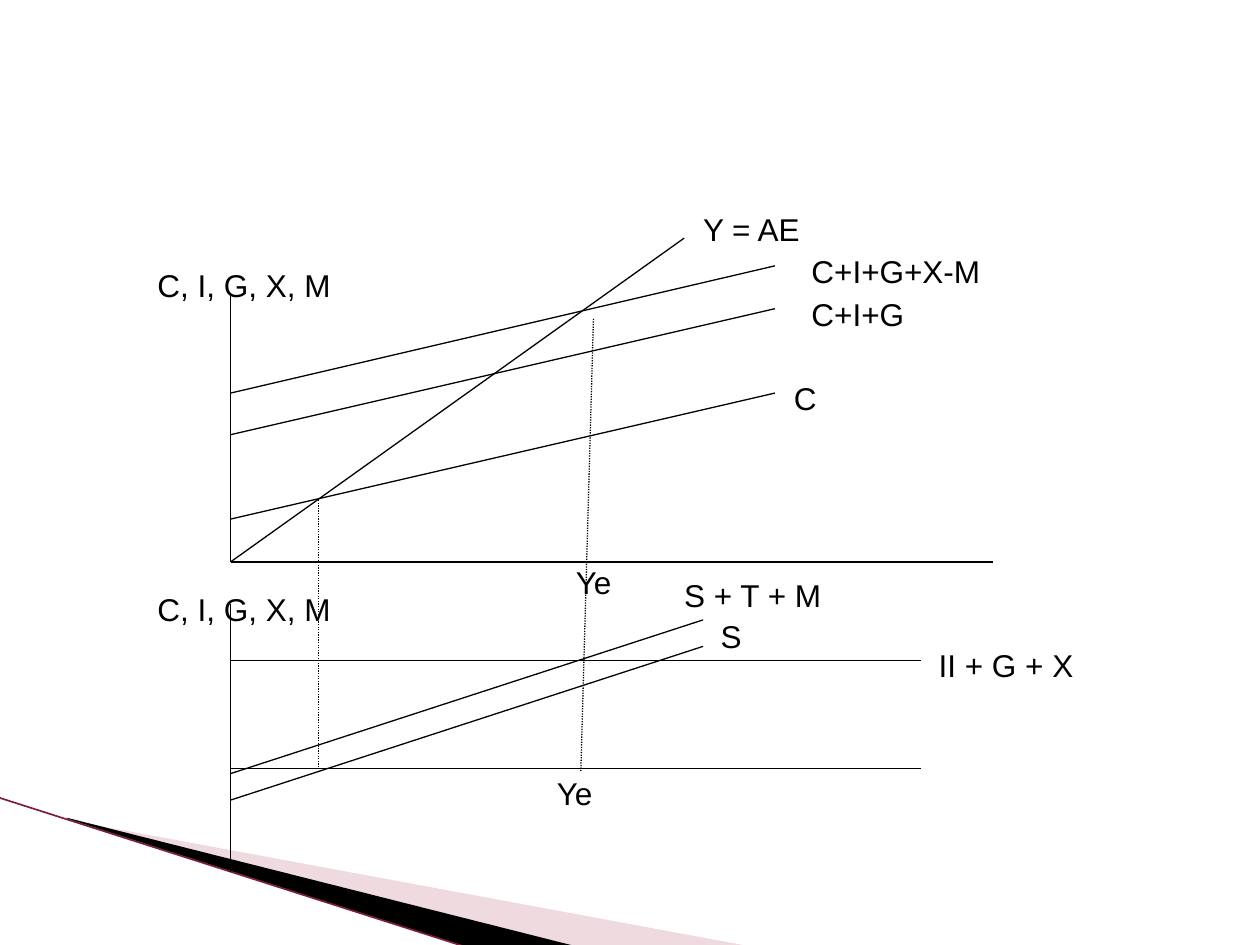
from dataclasses import dataclass

from lxml.etree import SubElement
from pptx import Presentation
from pptx.dml.color import RGBColor
from pptx.enum.dml import MSO_LINE
from pptx.enum.shapes import MSO_CONNECTOR
from pptx.oxml.ns import qn
from pptx.util import Pt

PX = 9144


@dataclass(frozen=True)
class Theme:
    """Colours, type and line weights of the slide."""
    ink: RGBColor = RGBColor(0x00, 0x00, 0x00)
    blush: RGBColor = RGBColor(0xD8, 0xA3, 0xAF)
    wine: RGBColor = RGBColor(0x7D, 0x1F, 0x3C)
    font: str = "Arial"
    label_size: float = 18
    label_gap: float = 10
    line_width: float = 0.75
    edge_width: float = 0.95
    blush_alpha: int = 40


THEME = Theme()


def add_line(slide, box, ends, color=THEME.ink, width=THEME.line_width, dash=None):
    """Draw a straight line between two points measured from the box corner."""
    left, top = box
    x1, y1, x2, y2 = ends
    line = slide.shapes.add_connector(
        MSO_CONNECTOR.STRAIGHT,
        (left + x1) * PX, (top + y1) * PX, (left + x2) * PX, (top + y2) * PX)
    line.line.color.rgb = color
    line.line.width = Pt(width)
    if dash:
        line.line.dash_style = dash
    SubElement(line._element.spPr, qn("a:effectLst"))


def add_label(slide, box, text, x, y, width):
    """Write one label at a place measured from the box corner."""
    left, top = box
    label = slide.shapes.add_textbox((left + x) * PX, (top + y) * PX, width * PX, 22 * PX)
    frame = label.text_frame
    frame.word_wrap = True
    frame.margin_left = frame.margin_top = frame.margin_right = frame.margin_bottom = 0
    paragraph = frame.paragraphs[0]
    paragraph.text = text
    paragraph.space_after = Pt(THEME.label_gap)
    paragraph.font.name = THEME.font
    paragraph.font.size = Pt(THEME.label_size)
    paragraph.font.color.rgb = THEME.ink


def add_wedge(slide, box, points, color, alpha=None):
    """Fill a closed outline whose points are measured from the box corner."""
    left, top = box
    start, *others = [(left + x, top + y) for x, y in points]
    builder = slide.shapes.build_freeform(*start, scale=float(PX))
    builder.add_line_segments(others, close=True)
    wedge = builder.convert_to_shape()
    wedge.shadow.inherit = False
    wedge.fill.solid()
    wedge.fill.fore_color.rgb = color
    wedge.line.fill.background()
    if alpha:
        tint = wedge._element.spPr.find(qn("a:solidFill"))[0]
        SubElement(tint, qn("a:alpha"), val=str(alpha * 1000))


def add_corner(slide, box):
    """Draw the swept wedges in the lower left corner."""
    add_wedge(slide, box, [(55, 18), (595, 118), (456, 118), (55, 17)],
              THEME.blush, THEME.blush_alpha)
    add_wedge(slide, box, [(53, 16), (457, 118), (372, 119), (54, 17)], THEME.ink)
    add_line(slide, box, (-1, 0, 371, 119), THEME.wine, THEME.edge_width)


def add_panel(slide, box, lines, labels):
    """Draw the axes, curves and labels of one diagram."""
    for ends in lines:
        add_line(slide, box, ends)
    for label in labels:
        add_label(slide, box, *label)


def add_expenditure(slide, box):
    """Draw the aggregate expenditure diagram."""
    axis = 58
    axes = [(axis, 67, axis, 279), (axis, 279, 663, 279)]
    spending = [(axis, start, 490, end) for start, end in ((145, 44), (178, 78), (245, 145))]
    income = (axis, 279, 418, 22)
    add_panel(slide, box, [*axes, *spending, income], [
        ("C, I, G, X, M", 0, 44, 173),
        ("Y = AE", 433, 0, 101),
        ("C+I+G+X-M", 519, 33, 159),
        ("C+I+G", 519, 67, 101),
        ("C", 505, 134, 43),
        ("Ye", 332, 280, 43),
    ])


def add_leakages(slide, box):
    """Draw the injections and leakages diagram."""
    axis = 58
    upright = (axis, 22, axis, 235)
    levels = [(axis, y, 606, y) for y in (67, 153)]
    leakages = [(axis, start, 433, start - 122) for start in (157, 178)]
    add_panel(slide, box, [upright, *levels, *leakages], [
        ("C, I, G, X, M", 0, 11, 173),
        ("S + T + M", 418, 0, 130),
        ("S", 447, 33, 43),
        ("II + G + X", 620, 56, 130),
        ("Ye", 317, 157, 43),
    ])


def add_guides(slide, box):
    """Draw the dotted lines that join the two diagrams."""
    for ends in ((128, 230, 128, 442), (346, 86, 336, 445)):
        add_line(slide, box, ends, dash=MSO_LINE.ROUND_DOT)


def main():
    """Build the slide and save it."""
    deck = Presentation()
    deck.slide_width, deck.slide_height = 1000 * PX, 750 * PX
    slide = deck.slides.add_slide(deck.slide_layouts[6])
    add_corner(slide, (0, 633))
    add_expenditure(slide, (125, 167))
    add_leakages(slide, (125, 457))
    add_guides(slide, (125, 167))
    deck.save("out.pptx")


if __name__ == "__main__":
    main()
